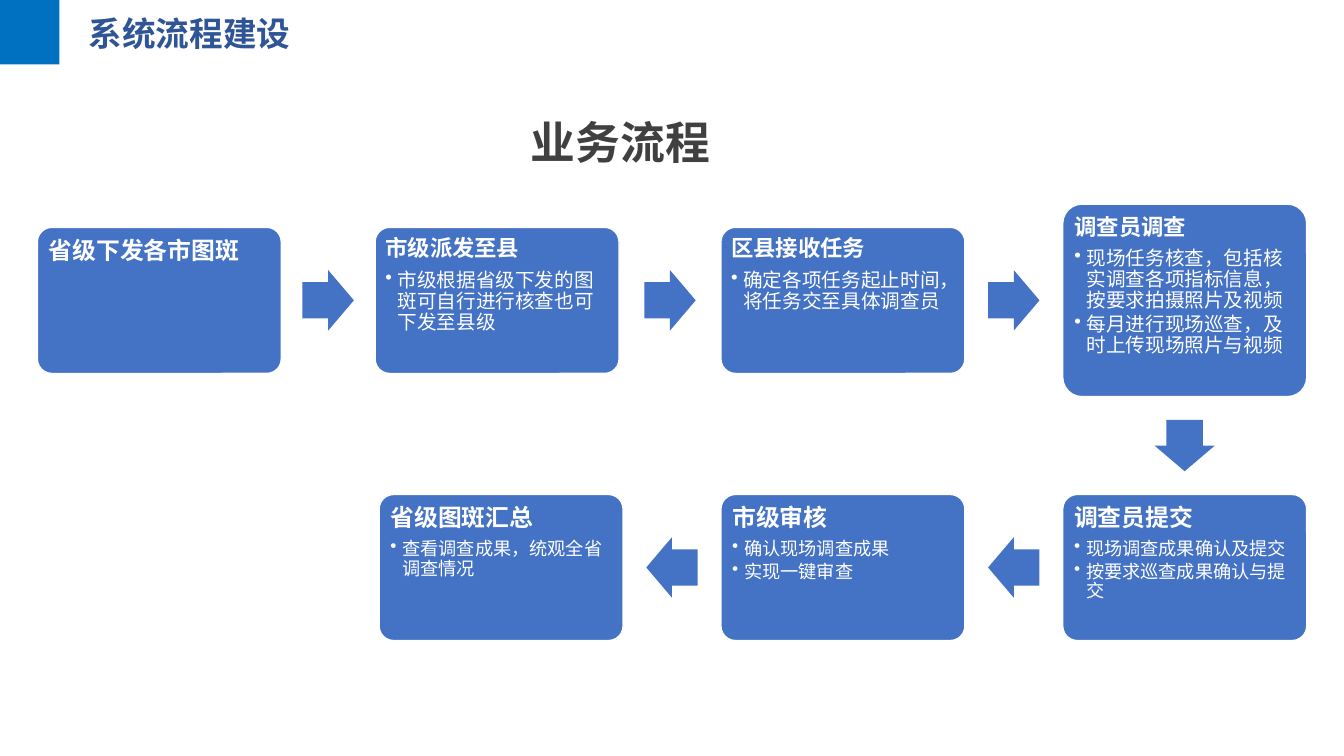
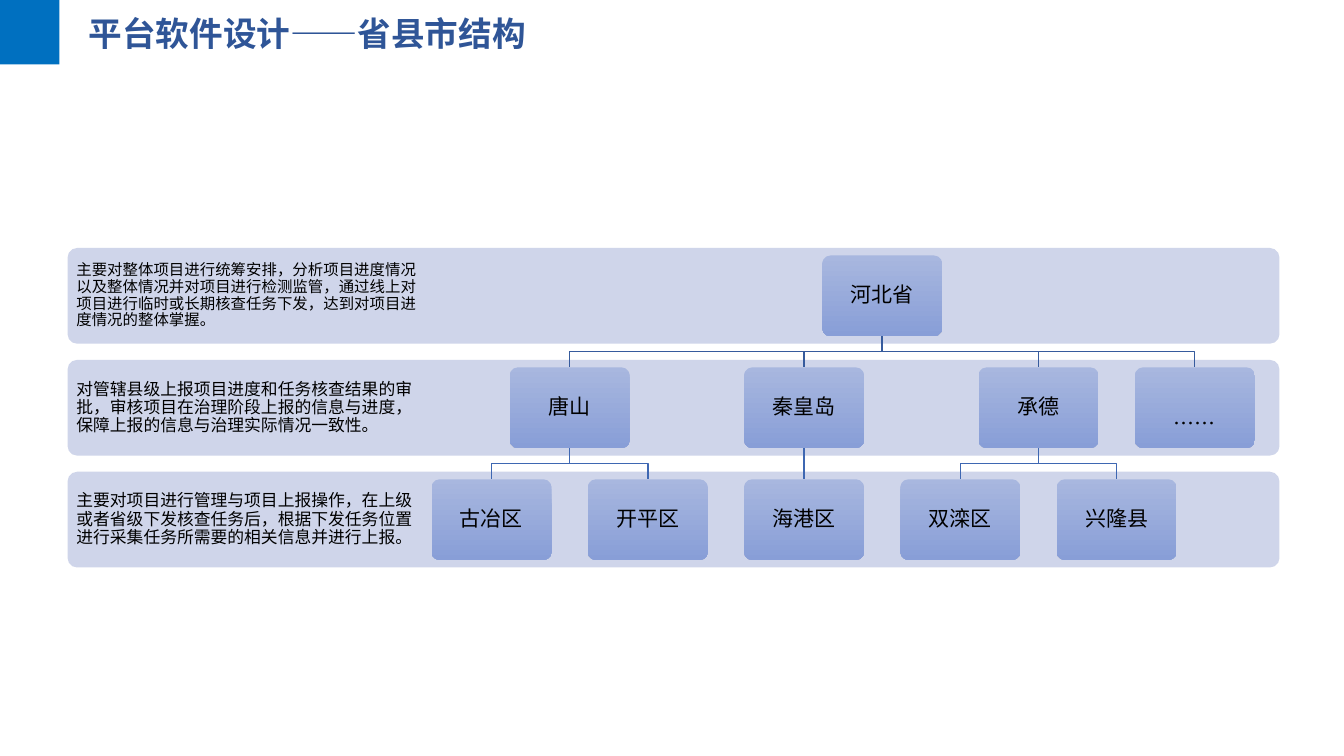
"""Builds two slides: a survey workflow and a province-city-county structure."""
from lxml import etree
from pptx import Presentation
from pptx import util as u
from pptx.dml.color import RGBColor
from pptx.enum import shapes, text
from pptx.oxml.ns import qn

WIDTH, HEIGHT = 13.33, 7.5
FONT = "Noto Sans CJK SC"
BLUE, ACCENT, TITLE, GREY = "4472C4", "0070C0", "2F5597", "404040"
BAND, NODE_TOP, NODE_BOTTOM = "CFD5EA", "A8B7DF", "889ED7"
ROOT_LINE, CITY_LINE, WHITE, BLACK = "365B9D", "3E67B2", "FFFFFF", "000000"
SHAPE, ALIGN, ANCHOR = shapes.MSO_SHAPE, text.PP_ALIGN, text.MSO_ANCHOR
TIGHT = 0.9

CARD_W, CARD_H, TALL_H = 2.42, 1.45, 1.91
ARROW_LONG, ARROW_WIDE = 0.51, 0.6
TOP_MIDDLE, BOTTOM_MIDDLE = 2.98, 5.63
STEPS = [
    (0.37, TOP_MIDDLE, CARD_H, 17, 14, "省级下发各市图斑", []),
    (3.72, TOP_MIDDLE, CARD_H, 16, 14, "市级派发至县",
     ["市级根据省级下发的图斑可自行进行核查也可下发至县级"]),
    (7.15, TOP_MIDDLE, CARD_H, 16, 14, "区县接收任务",
     ["确定各项任务起止时间，将任务交至具体调查员"]),
    (10.54, TOP_MIDDLE, TALL_H, 16, 14, "调查员调查",
     ["现场任务核查，包括核实调查各项指标信息，按要求拍摄照片及视频",
      "每月进行现场巡查，及时上传现场照片与视频"]),
    (10.54, BOTTOM_MIDDLE, CARD_H, 17, 13, "调查员提交",
     ["现场调查成果确认及提交", "按要求巡查成果确认与提交"]),
    (7.15, BOTTOM_MIDDLE, CARD_H, 17, 13, "市级审核",
     ["确认现场调查成果", "实现一键审查"]),
    (3.76, BOTTOM_MIDDLE, CARD_H, 17, 13, "省级图斑汇总",
     ["查看调查成果，统观全省调查情况"]),
]

BAND_LEFT, BAND_TOP, BAND_W, BAND_H, ROW_PITCH = 0.67, 2.46, 12.02, 0.95, 1.11
DUTY_W = 3.61
NODE_LEFT, NODE_W, NODE_H, COLUMN_PITCH = 4.28, 1.19, 0.8, 1.55
DUTIES = [
    ("主要对整体项目进行统筹安排，分析项目进度情况以及整体情况并对项目进行检测监管，"
     "通过线上对项目进行临时或长期核查任务下发，达到对项目进度情况的整体掌握。", 11),
    ("对管辖县级上报项目进度和任务核查结果的审批，审核项目在治理阶段上报的信息与进度，"
     "保障上报的信息与治理实际情况一致性。", 12),
    ("主要对项目进行管理与项目上报操作，在上级或者省级下发核查任务后，"
     "根据下发任务位置进行采集任务所需要的相关信息并进行上报。", 12),
]
PROVINCE = ("河北省", 2.5, [
    ("唐山", 0.5, [("古冶区", 0, []), ("开平区", 1, [])]),
    ("秦皇岛", 2, [("海港区", 2, [])]),
    ("承德", 3.5, [("双滦区", 3, []), ("兴隆县", 4, [])]),
    ("……", 4.5, []),
])


def rgb(value):
    return RGBColor.from_string(value)


def write(frame, content, size, color, bold=False, font=FONT, align=ALIGN.LEFT,
          spacing=None, after=0, bullet=False, more=False):
    paragraph = frame.add_paragraph() if more else frame.paragraphs[0]
    paragraph.alignment = align
    paragraph.line_spacing = spacing
    paragraph.space_after = u.Pt(after)
    if bullet:
        props = paragraph._p.get_or_add_pPr()
        props.set("marL", str(u.Inches(0.12)))
        props.set("indent", str(-u.Inches(0.12)))
        etree.SubElement(props, qn("a:buChar")).set("char", "•")
    run = paragraph.add_run()
    run.text = content
    run.font.size, run.font.bold, run.font.name = u.Pt(size), bold, font
    run.font.color.rgb = rgb(color)
    etree.SubElement(run._r.get_or_add_rPr(), qn("a:ea")).set("typeface", FONT)


def set_frame(frame, left, top, right, bottom, anchor):
    frame.word_wrap, frame.auto_size = True, text.MSO_AUTO_SIZE.NONE
    frame.vertical_anchor = anchor
    frame.margin_left, frame.margin_top = u.Inches(left), u.Inches(top)
    frame.margin_right, frame.margin_bottom = u.Inches(right), u.Inches(bottom)


def add_box(slide, kind, left, top, width, height, fill, line=None, adjust=()):
    box = slide.shapes.add_shape(kind, *map(u.Inches, (left, top, width, height)))
    box.shadow.inherit = False
    for index, value in enumerate(adjust):
        box.adjustments[index] = value
    if isinstance(fill, tuple):
        box.fill.gradient()
        box.fill.gradient_angle = 270
        for stop, color in zip(box.fill.gradient_stops, fill):
            stop.color.rgb = rgb(color)
    else:
        box.fill.solid()
        box.fill.fore_color.rgb = rgb(fill)
    if line:
        box.line.color.rgb = rgb(line)
        box.line.width = u.Pt(1)
    else:
        box.line.fill.background()
    return box


def add_titled_slide(deck, title):
    slide = deck.slides.add_slide(deck.slide_layouts[5])
    heading = slide.shapes.title
    heading.left, heading.top = u.Inches(0.78), u.Inches(0.08)
    heading.width, heading.height = u.Inches(6), u.Inches(0.5)
    set_frame(heading.text_frame, 0.1, 0.05, 0.1, 0.05, ANCHOR.MIDDLE)
    write(heading.text_frame, title, 24, TITLE, bold=True)
    add_box(slide, SHAPE.RECTANGLE, 0, 0, 0.59, 0.64, ACCENT)
    return slide


def add_step(slide, left, middle, height, head_size, list_size, head, points):
    card = add_box(slide, SHAPE.ROUNDED_RECTANGLE, left, middle - height / 2,
                   CARD_W, height, BLUE, WHITE, [0.1])
    inset = 0.07 if head_size == 17 else 0.06
    set_frame(card.text_frame, inset, inset, inset, inset, ANCHOR.TOP)
    write(card.text_frame, head, head_size, WHITE, bold=True, spacing=TIGHT, after=6)
    for point in points:
        write(card.text_frame, point, list_size, WHITE, spacing=TIGHT, after=2,
              bullet=True, more=True)


def add_step_arrow(slide, start, end):
    (x1, y1, h1), (x2, y2, h2) = start[:3], end[:3]
    center_x, center_y = (x1 + x2 + CARD_W) / 2, (y1 + y2) / 2
    width, height = ARROW_LONG, ARROW_WIDE
    kind = SHAPE.RIGHT_ARROW if x2 > x1 else SHAPE.LEFT_ARROW
    if x1 == x2:
        kind, width, height = SHAPE.DOWN_ARROW, height, width
        center_y = (y1 + h1 / 2 + y2 - h2 / 2) / 2
    add_box(slide, kind, center_x - width / 2, center_y - height / 2,
            width, height, BLUE, adjust=[0.6, 0.5])


def add_workflow(deck):
    slide = add_titled_slide(deck, "系统流程建设")
    caption = slide.shapes.add_textbox(*map(u.Inches, (3.82, 1.08, 4.67, 0.64)))
    set_frame(caption.text_frame, 0.1, 0.05, 0.1, 0.05, ANCHOR.MIDDLE)
    write(caption.text_frame, "业务流程", 32, GREY, bold=True,
          font="League Spartan", align=ALIGN.CENTER)
    for step in STEPS:
        add_step(slide, *step)
    for start, end in zip(STEPS, STEPS[1:]):
        add_step_arrow(slide, start, end)


def add_link(slide, parent, child, color):
    start_x, start_y = parent.left + parent.width // 2, parent.top + parent.height
    end_x, end_y = child.left + child.width // 2, child.top
    if start_x == end_x:
        link = slide.shapes.add_connector(shapes.MSO_CONNECTOR.STRAIGHT,
                                          start_x, start_y, end_x, end_y)
        link.begin_connect(parent, 2)
        link.end_connect(child, 0)
        etree.SubElement(link._element.spPr, qn("a:effectLst"))
    else:
        bend = (start_y + end_y) // 2
        outline = slide.shapes.build_freeform(start_x, start_y)
        outline.add_line_segments([(start_x, bend), (end_x, bend), (end_x, end_y)],
                                  close=False)
        link = outline.convert_to_shape()
        link.fill.background()
        link.shadow.inherit = False
    link.line.color.rgb, link.line.width = rgb(color), u.Pt(1)


def add_branch(slide, name, column, children, level=0):
    left = NODE_LEFT + column * COLUMN_PITCH
    top = BAND_TOP + level * ROW_PITCH + (BAND_H - NODE_H) / 2
    node = add_box(slide, SHAPE.ROUNDED_RECTANGLE, left, top, NODE_W, NODE_H,
                   (NODE_TOP, NODE_BOTTOM), adjust=[0.1])
    set_frame(node.text_frame, 0.06, 0.39 if name == "……" else 0.06,
              0.06, 0.06, ANCHOR.MIDDLE)
    write(node.text_frame, name, 15, BLACK, align=ALIGN.CENTER, spacing=TIGHT)
    for child in children:
        add_link(slide, node, add_branch(slide, *child, level=level + 1),
                 CITY_LINE if level else ROOT_LINE)
    return node


def add_structure(deck):
    slide = add_titled_slide(deck, "平台软件设计——省县市结构")
    for row, (duty, size) in enumerate(DUTIES):
        band = add_box(slide, SHAPE.ROUNDED_RECTANGLE, BAND_LEFT,
                       BAND_TOP + row * ROW_PITCH, BAND_W, BAND_H, BAND, adjust=[0.1])
        set_frame(band.text_frame, 0.06, 0.06, BAND_W - DUTY_W + 0.06, 0.06,
                  ANCHOR.MIDDLE)
        write(band.text_frame, duty, size, BLACK, spacing=TIGHT)
    add_branch(slide, *PROVINCE)


def main():
    deck = Presentation()
    deck.slide_width, deck.slide_height = u.Inches(WIDTH), u.Inches(HEIGHT)
    add_workflow(deck)
    add_structure(deck)
    deck.save("out.pptx")


if __name__ == "__main__":
    main()
